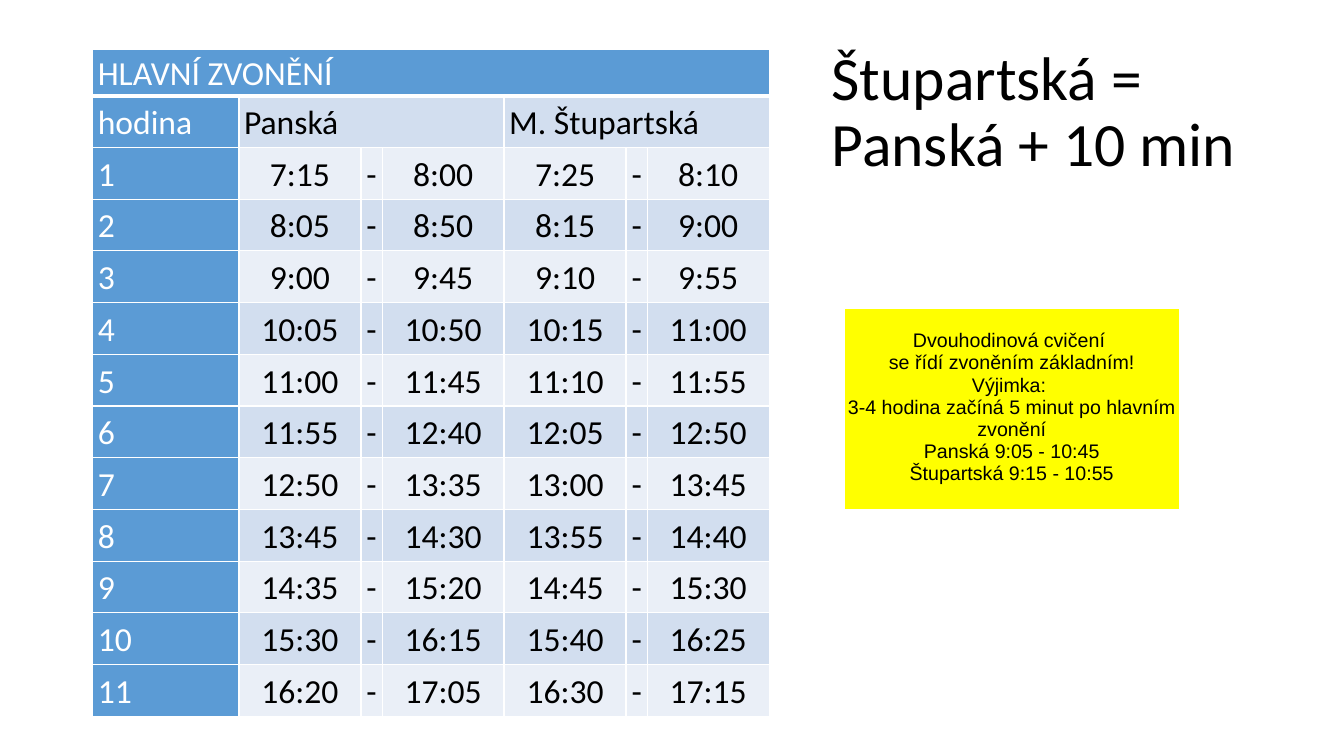
from copy import deepcopy

from lxml import etree
from pptx import Presentation
from pptx import util as u
from pptx.dml.color import RGBColor
from pptx.enum import text as t
from pptx.oxml import ns

HEADLINE = "Štupartská = Panská + 10 min"
NOTE = (
    "Dvouhodinová cvičení \n"
    "se řídí zvoněním základním!\n"
    "Výjimka: \n"
    "3-4 hodina začíná 5 minut po hlavním zvonění\n"
    "Panská 9:05 - 10:45\n"
    "Štupartská 9:15 - 10:55"
)
BELLS_TITLE = "HLAVNÍ ZVONĚNÍ"
HOUR, PANSKA, STUPARTSKA = "hodina", "Panská", "M. Štupartská"
LESSONS = [
    ("7:15", "8:00", "7:25", "8:10"),
    ("8:05", "8:50", "8:15", "9:00"),
    ("9:00", "9:45", "9:10", "9:55"),
    ("10:05", "10:50", "10:15", "11:00"),
    ("11:00", "11:45", "11:10", "11:55"),
    ("11:55", "12:40", "12:05", "12:50"),
    ("12:50", "13:35", "13:00", "13:45"),
    ("13:45", "14:30", "13:55", "14:40"),
    ("14:35", "15:20", "14:45", "15:30"),
    ("15:30", "16:15", "15:40", "16:25"),
    ("16:20", "17:05", "16:30", "17:15"),
]

BLACK = RGBColor(0, 0, 0)
WHITE = RGBColor(0xFF, 0xFF, 0xFF)
BLUE = RGBColor(0x5B, 0x9B, 0xD5)
PALE = RGBColor(0xD2, 0xDE, 0xEF)
PALEST = RGBColor(0xEA, 0xEF, 0xF7)
YELLOW = RGBColor(0xFF, 0xFF, 0)

BELLS_BOX = (0.92, 0.49, 6.72, 6.62)
NOTE_BOX = (8.37, 3.06, 3.33, 2)
HEADLINE_BOX = (8.15, 0.4, 4.26, 1.45)
TIME_WIDTHS = [1.21, 0.21, 1.21]
COLUMN_WIDTHS = [1.45] + TIME_WIDTHS * 2
TITLE_HEIGHT = 0.46


def write(frame, words, size=24, font="Calibri", color=BLACK, align=None,
          spacing=None, after=None):
    para = frame.paragraphs[0]
    para.text = words
    para.alignment = align
    para.line_spacing = spacing
    if after is not None:
        para.space_after = u.Pt(after)
    for run in para.runs:
        run.font.size = u.Pt(size)
        run.font.name = font
        run.font.color.rgb = color
    for line_break in para._p.findall(ns.qn("a:br")):
        line_break.append(deepcopy(para.runs[0]._r.rPr))


def add_grid(slide, box, rows, columns):
    grid = slide.shapes.add_table(rows, columns, *map(u.Inches, box)).table
    grid.first_row = grid.horz_banding = False
    return grid


def style_cell(cell, fill, margins):
    cell.fill.solid()
    cell.fill.fore_color.rgb = fill
    cell.vertical_anchor = t.MSO_ANCHOR.MIDDLE
    (cell.margin_left, cell.margin_top,
     cell.margin_right, cell.margin_bottom) = map(u.Inches, margins)


def draw_borders(cell, bottom=1):
    props = cell._tc.get_or_add_tcPr()
    for tag, width in (("lnL", 1), ("lnR", 1), ("lnT", 1), ("lnB", bottom)):
        line = etree.SubElement(props, ns.qn("a:" + tag), w=str(u.Pt(width)))
        solid = etree.SubElement(line, ns.qn("a:solidFill"))
        etree.SubElement(solid, ns.qn("a:srgbClr"), val=str(WHITE))


def add_bells(slide):
    rows = [
        [BELLS_TITLE] + [""] * 6,
        [HOUR, PANSKA, "", "", STUPARTSKA, "", ""],
    ]
    for hour, (start, end, late_start, late_end) in enumerate(LESSONS, 1):
        rows.append([str(hour), start, "-", end, late_start, "-", late_end])

    bells = add_grid(slide, BELLS_BOX, len(rows), len(COLUMN_WIDTHS))
    for column, width in zip(bells.columns, COLUMN_WIDTHS):
        column.width = u.Inches(width)
    lesson_height = (BELLS_BOX[3] - TITLE_HEIGHT) / (len(rows) - 1)
    for r, row in enumerate(rows):
        bells.rows[r].height = u.Inches(lesson_height if r else TITLE_HEIGHT)
        for c, words in enumerate(row):
            cell = bells.cell(r, c)
            heading = r == 0 or c == 0
            band = PALE if r % 2 else PALEST
            draw_borders(cell, bottom=1 if r else 3)
            style_cell(cell, BLUE if heading else band, (0.05, 0.01, 0.05, 0.01))
            if words:
                write(cell.text_frame, words, color=WHITE if heading else BLACK,
                      align=t.PP_ALIGN.CENTER if r > 1 and c else None,
                      spacing=1.07, after=8)
    for r, first, last in ((0, 0, 6), (1, 1, 3), (1, 4, 6)):
        bells.cell(r, first).merge(bells.cell(r, last))


def main():
    prs = Presentation()
    prs.slide_width, prs.slide_height = u.Inches(13.33), u.Inches(7.5)
    slide = prs.slides.add_slide(prs.slide_layouts[6])

    headline = slide.shapes.add_textbox(*map(u.Inches, HEADLINE_BOX)).text_frame
    headline.word_wrap = True
    headline.vertical_anchor = t.MSO_ANCHOR.MIDDLE
    write(headline, HEADLINE, size=44, spacing=0.9)

    note = add_grid(slide, NOTE_BOX, 1, 1).cell(0, 0)
    style_cell(note, YELLOW, (0.01, 0.01, 0.01, 0.05))
    write(note.text_frame, NOTE, size=14, font="Arial", align=t.PP_ALIGN.CENTER)

    add_bells(slide)
    prs.save("out.pptx")


if __name__ == "__main__":
    main()
